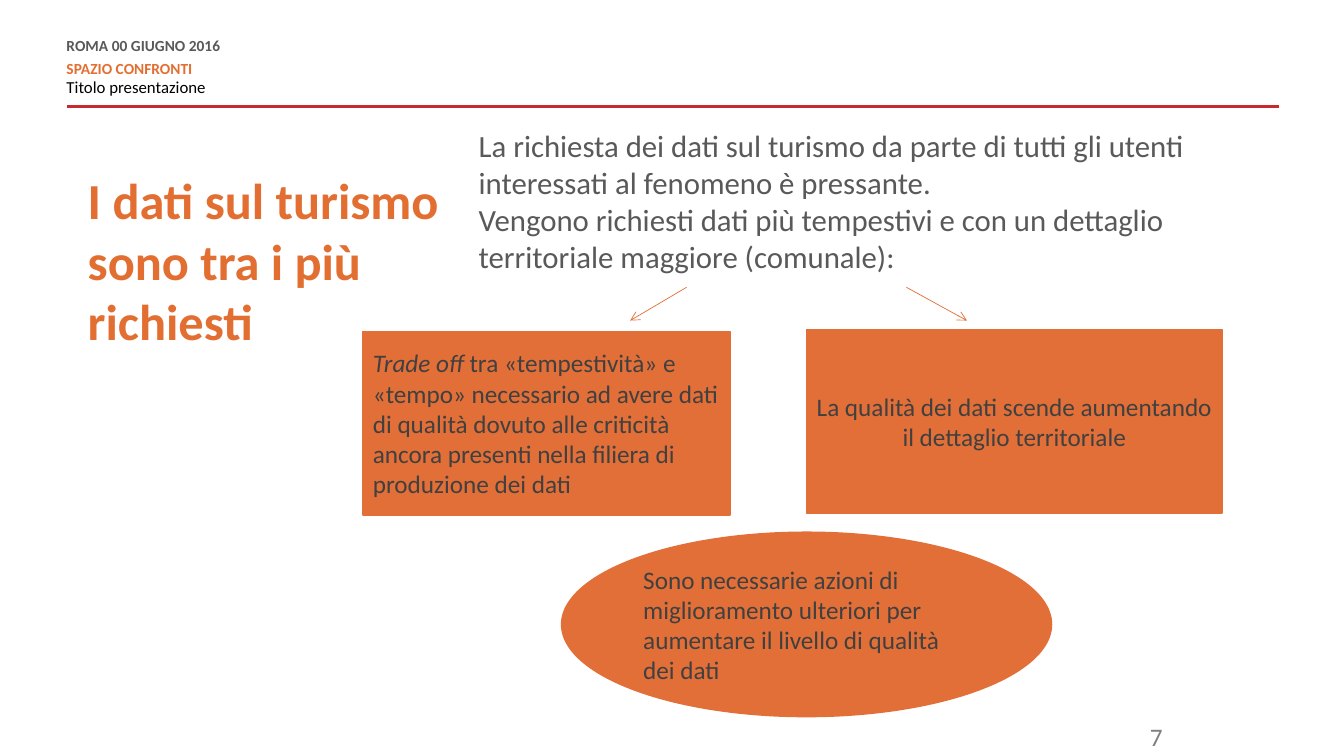
from lxml.etree import SubElement
from pptx import Presentation
from pptx.dml.color import RGBColor
from pptx.enum.shapes import MSO_CONNECTOR, MSO_SHAPE
from pptx.enum.text import MSO_ANCHOR, PP_ALIGN
from pptx.oxml.ns import qn
from pptx.util import Pt

PX = 9144  # 100 px to the inch
ORANGE, BOX_FILL = "E26F31", "E26F37"
GREY, DARK, PALE, BLACK, RED = "595959", "404040", "7F7F7F", "000000", "C72A31"


def rgb(value):
    return RGBColor.from_string(value)


def px(*lengths):
    return [n * PX for n in lengths]


class Deck:
    font = "Calibri"

    def __init__(self, width, height):
        self.prs = Presentation()
        self.prs.slide_width, self.prs.slide_height = px(width, height)
        self.s = self.prs.slides.add_slide(self.prs.slide_layouts[6])

    def set_text(self, tf, paragraphs, size, color, anchor=MSO_ANCHOR.TOP, **base):
        """Each paragraph is a pair: its format and a list of (text, font format)."""
        tf.word_wrap = True
        tf.vertical_anchor = anchor
        for i, (layout, runs) in enumerate(paragraphs):
            p = tf.paragraphs[0] if i == 0 else tf.add_paragraph()
            for key, value in ({"alignment": PP_ALIGN.LEFT} | layout).items():
                setattr(p, key, value)
            for text, extra in runs:
                r = p.add_run()
                r.text = text
                look = {"name": self.font, "size": Pt(size), "color": color} | base | extra
                r.font.color.rgb = rgb(look.pop("color"))
                for key, value in look.items():
                    setattr(r.font, key, value)

    def text(self, box, paragraphs, size, color, inset=True, **base):
        tf = self.s.shapes.add_textbox(*px(*box)).text_frame
        if not inset:
            for side in ("left", "top", "right", "bottom"):
                setattr(tf, f"margin_{side}", 0)
        self.set_text(tf, paragraphs, size, color, **base)

    def shape(self, kind, box, paragraphs):
        sp = self.s.shapes.add_shape(kind, *px(*box))
        sp.shadow.inherit = False
        sp.fill.solid()
        sp.fill.fore_color.rgb = sp.line.color.rgb = rgb(BOX_FILL)
        sp.line.width = Pt(1)
        self.set_text(sp.text_frame, paragraphs, 18, DARK, MSO_ANCHOR.MIDDLE)

    def line(self, ends, color, width, arrow=False):
        cxn = self.s.shapes.add_connector(MSO_CONNECTOR.STRAIGHT, *px(*ends))
        cxn.line.color.rgb = rgb(color)
        cxn.line.width = Pt(width)
        props = cxn._element.spPr
        SubElement(props, qn("a:effectLst"))
        if arrow:
            SubElement(props.find(qn("a:ln")), qn("a:tailEnd"), type="arrow")


def main():
    deck = Deck(1333, 750)

    # Header and rule
    deck.line((1269, 106, 66, 106), RED, 2)
    tight = {"line_spacing": Pt(10.8)}
    deck.text((66, 39, 834, 59), [
        (tight | {"space_after": Pt(6)}, [("ROMA 00 GIUGNO 2016", {})]),
        (tight, [("SPAZIO CONFRONTI", {"color": ORANGE})]),
        (tight | {"space_before": Pt(3), "space_after": Pt(6)},
         [("Titolo presentazione", {"size": Pt(12), "color": BLACK, "bold": False})]),
    ], 11, GREY, inset=False, bold=True)

    # Page number
    deck.text((863, 711, 300, 40), [({"alignment": PP_ALIGN.RIGHT}, [("7", {})])], 18, PALE)

    # Introduction and title
    deck.text((465, 121, 727, 148), [
        ({}, [("La richiesta dei dati sul turismo da parte di tutti gli utenti "
               "interessati al fenomeno è pressante.", {})]),
        ({}, [("Vengono richiesti dati più tempestivi e con un dettaglio "
               "territoriale maggiore (comunale):", {})]),
    ], 22, GREY)
    deck.text((87, 168, 412, 330),
              [({}, [("I dati sul turismo sono tra i più richiesti", {})])],
              36, ORANGE, inset=False, bold=True)

    # Two issues and the conclusion
    deck.shape(MSO_SHAPE.RECTANGLE, (360, 329, 364, 182), [
        ({}, [("Trade off ", {"italic": True}),
              ("tra «tempestività» e «tempo» necessario ad avere dati di qualità dovuto "
               "alle criticità ancora presenti nella filiera di produzione dei dati", {})])])
    deck.shape(MSO_SHAPE.RECTANGLE, (800, 327, 412, 182), [
        ({"alignment": PP_ALIGN.CENTER},
         [("La qualità dei dati scende aumentando il dettaglio territoriale", {})])])
    deck.shape(MSO_SHAPE.OVAL, (557, 528, 486, 183), [
        ({}, [("Sono necessarie azioni di miglioramento ulteriori per aumentare "
               "il livello di qualità dei dati", {})])])

    # Arrows from the introduction to the issues
    deck.line((681, 285, 625, 318), BOX_FILL, 0.5, arrow=True)
    deck.line((899, 285, 959, 318), ORANGE, 0.5, arrow=True)

    deck.prs.save("out.pptx")


if __name__ == "__main__":
    main()
